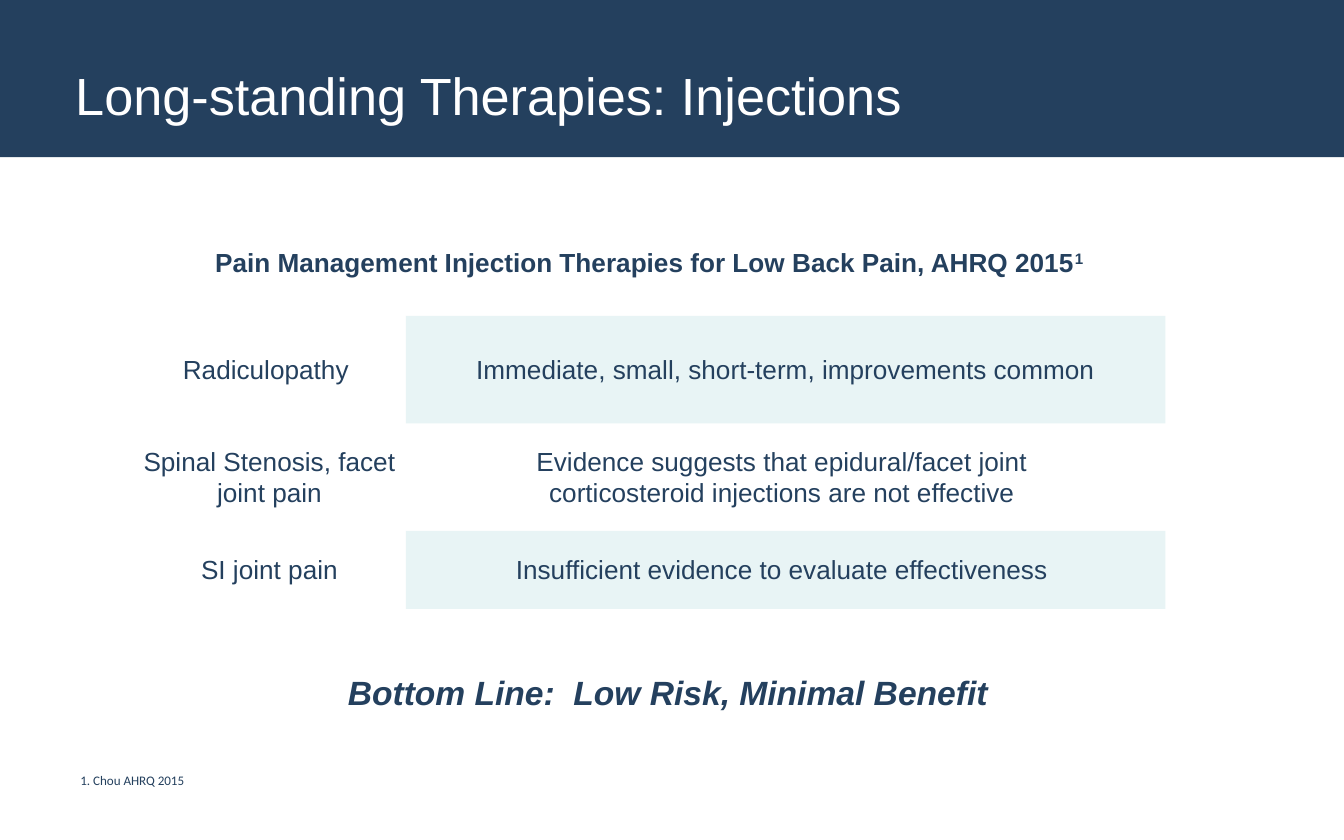
import dataclasses
import typing

import pptx
import pptx.dml.color
import pptx.enum.shapes
import pptx.enum.text
import pptx.oxml.ns
import pptx.util
from lxml import etree

Pt = pptx.util.Pt
Color = pptx.dml.color.RGBColor
Align = pptx.enum.text.PP_ALIGN
Anchor = pptx.enum.text.MSO_ANCHOR
qn = pptx.oxml.ns.qn


@dataclasses.dataclass(frozen=True)
class Theme:
    navy: Color = Color(0x24, 0x40, 0x5E)
    white: Color = Color(0xFF, 0xFF, 0xFF)
    teal: Color = Color(0x8D, 0xC9, 0xCE)
    alpha: int = 20  # percent opacity of the teal tint
    sans: str = "Arial"
    small: str = "Calibri"
    title: float = 28
    body: float = 14
    close: float = 18
    note: float = 7
    lead: float = 1.07
    plain: str = "{2D5ABB26-0587-4C30-8999-92F81FD0307C}"  # no style, no grid


@dataclasses.dataclass(frozen=True)
class Label:
    text: str
    box: tuple[float, float, float, float]
    size: float
    color: Color
    face: str = Theme.sans
    strong: bool = False  # bold italic
    wrap: bool = True
    anchor: Anchor = Anchor.TOP
    inset: float = 7.2
    lead: float = 1.0


@dataclasses.dataclass(frozen=True)
class Row:
    topic: str
    result: tuple[str, ...]
    height: float
    tint: bool = False


THEME = Theme()
WIDTH, HEIGHT = 720, 450

LABELS = (
    Label("Long-standing Therapies: Injections", (36.72, 18.72, 519.84, 61.92),
          THEME.title, THEME.white, anchor=Anchor.MIDDLE, inset=3.6,
          lead=THEME.lead),
    Label("1. Chou AHRQ 2015", (36, 410.4, 404.64, 15.84),
          THEME.note, THEME.navy, face=THEME.small),
    Label("Bottom Line:  Low Risk, Minimal Benefit",
          (179.28, 356.4, 360.72, 51.12),
          THEME.close, THEME.navy, strong=True, wrap=False),
)

HEAD = "Pain Management Injection Therapies for Low Back Pain, AHRQ 2015"
TALL, SHORT = 57.6, 41.76
ROWS = (
    Row("Radiculopathy ",
        ("Immediate, small, short-term, improvements common",), TALL, True),
    Row("Spinal Stenosis, facet joint pain",
        ("Evidence suggests that epidural/facet joint ",
         "corticosteroid injections are not effective "), TALL),
    Row("SI joint pain",
        ("Insufficient evidence to evaluate effectiveness ",), SHORT, True),
)
COLS = (146.16, 406.8)


def add_band(slide: typing.Any) -> None:
    band = slide.shapes.add_shape(
        pptx.enum.shapes.MSO_SHAPE.RECTANGLE, 0, 0, Pt(WIDTH), Pt(84.24))
    band.shadow.inherit = False
    band.fill.solid()
    band.fill.fore_color.rgb = THEME.navy
    band.line.fill.background()


def add_label(slide: typing.Any, label: Label) -> None:
    frame = slide.shapes.add_textbox(*map(Pt, label.box)).text_frame
    frame.word_wrap = label.wrap
    frame.vertical_anchor = label.anchor
    frame.margin_left = Pt(label.inset)
    para = frame.paragraphs[0]
    para.text = label.text
    para.line_spacing = label.lead
    font = para.font
    font.name, font.size = label.face, Pt(label.size)
    font.bold = font.italic = label.strong
    font.color.rgb = label.color


def fill_cell(cell: typing.Any, lines: tuple[str, ...],
              bold: bool = False, tint: bool = False) -> None:
    cell.vertical_anchor = Anchor.MIDDLE
    cell.margin_left = cell.margin_right = Pt(5)
    cell.margin_top = cell.margin_bottom = 0
    cell.text = "\n".join(lines)
    for para in cell.text_frame.paragraphs:
        para.alignment = Align.CENTER
        para.line_spacing = THEME.lead
        para.font.name, para.font.size = THEME.sans, Pt(THEME.body)
        para.font.bold = bold
        para.font.color.rgb = THEME.navy
    if tint:
        cell.fill.solid()
        cell.fill.fore_color.rgb = THEME.teal
        color = next(cell._tc.iter(qn("a:tcPr"))).find(
            f"{qn('a:solidFill')}/{qn('a:srgbClr')}")
        etree.SubElement(color, qn("a:alpha")).set(
            "val", str(THEME.alpha * 1000))
    else:
        cell.fill.background()


def add_grid(slide: typing.Any) -> None:
    heights = [TALL] + [row.height for row in ROWS]
    table = slide.shapes.add_table(
        len(heights), len(COLS), Pt(71.28), Pt(111.6),
        Pt(sum(COLS)), Pt(sum(heights))).table
    table.first_row = table.horz_banding = False
    next(table._tbl.iter(qn("a:tableStyleId"))).text = THEME.plain
    for col, width in zip(table.columns, COLS):
        col.width = Pt(width)
    for line, height in zip(table.rows, heights):
        line.height = Pt(height)

    # Heading across both columns, with its reference mark
    head = table.cell(0, 0)
    head.merge(table.cell(0, 1))
    fill_cell(head, (HEAD,), bold=True)
    mark = head.text_frame.paragraphs[0].add_run()
    mark.text = "1"
    mark._r.get_or_add_rPr().set("baseline", "30000")

    # Findings
    for i, row in enumerate(ROWS, 1):
        fill_cell(table.cell(i, 0), (row.topic,))
        fill_cell(table.cell(i, 1), row.result, tint=row.tint)


def main() -> None:
    deck = pptx.Presentation()
    deck.slide_width, deck.slide_height = Pt(WIDTH), Pt(HEIGHT)
    slide = deck.slides.add_slide(deck.slide_layouts[6])
    add_band(slide)
    add_grid(slide)
    for label in LABELS:
        add_label(slide, label)
    deck.save("out.pptx")


if __name__ == "__main__":
    main()
